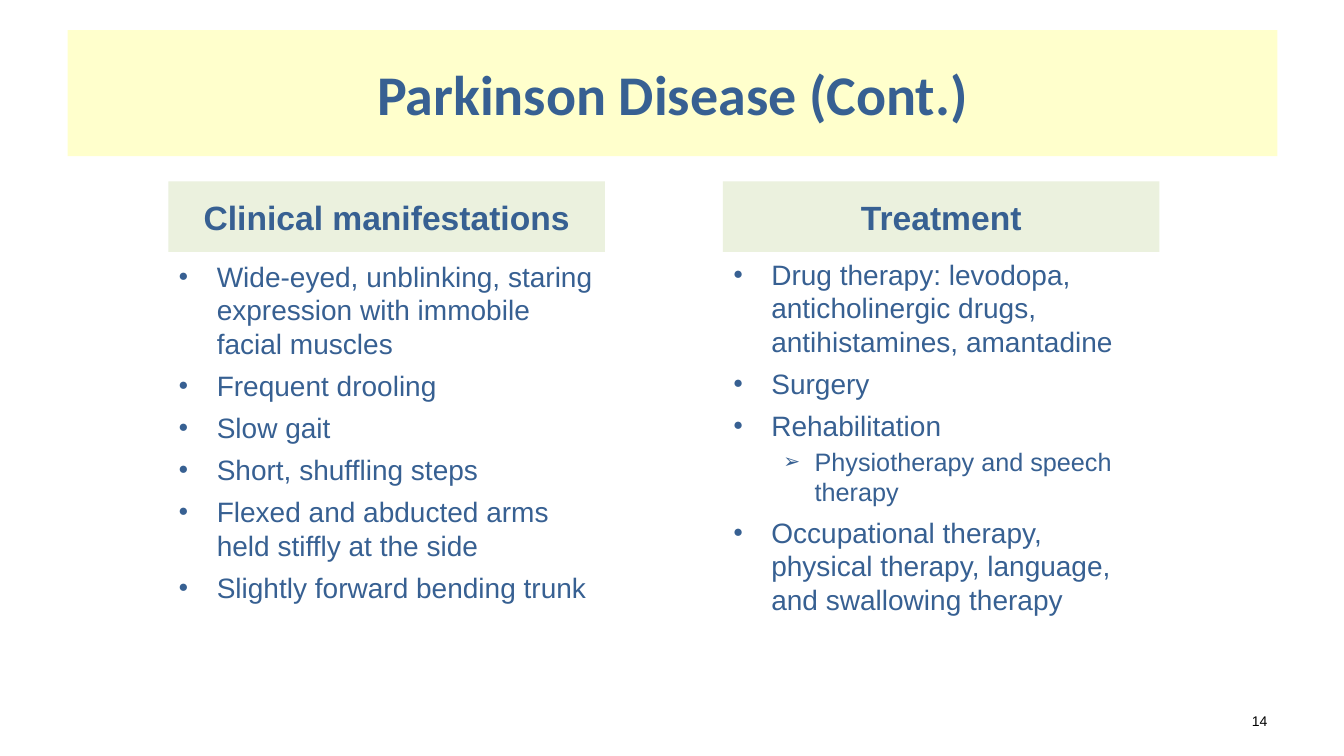
from dataclasses import dataclass

from lxml.etree import SubElement
from pptx import Presentation
from pptx.dml.color import RGBColor
from pptx.enum.text import MSO_ANCHOR, MSO_AUTO_SIZE, PP_ALIGN
from pptx.oxml.ns import qn
from pptx.util import Inches, Pt


@dataclass(frozen=True)
class Theme:
    blue: str = "376092"
    black: str = "000000"
    title_fill: str = "FFFFCC"
    heading_fill: str = "EBF1DE"
    title_font: str = "Calibri"
    body_font: str = "Arial"
    title_size: int = 40
    heading_size: int = 24
    number_size: int = 10


@dataclass(frozen=True)
class ListLevel:
    size: int
    space_before: int
    margin: float
    hanging: float
    bullet: str
    bullet_percent: int


LEVELS = (
    ListLevel(20, 6, 0.38, 0.38, "●", 60),
    ListLevel(18, 3, 0.81, 0.31, "➢", 80),
)


class SlideBuilder:
    def __init__(self, page, theme):
        self.page = page
        self.theme = theme

    def place(self, box, left, top, width, height):
        box.left, box.top = Inches(left), Inches(top)
        box.width, box.height = Inches(width), Inches(height)
        box.text_frame.word_wrap = True
        box.text_frame.auto_size = MSO_AUTO_SIZE.NONE

    def style(self, paragraph, size, color, font=None, bold=False):
        for span in paragraph.runs:
            span.font.name = font or self.theme.body_font
            span.font.size = Pt(size)
            span.font.bold = bold
            span.font.color.rgb = RGBColor.from_string(color)

    def banner(self, index, text, area, fill, size, font=None):
        """Fill a placeholder with a colour and one bold centred line."""
        box = self.page.placeholders[index]
        self.place(box, *area)
        box.fill.solid()
        box.fill.fore_color.rgb = RGBColor.from_string(fill)
        box.text_frame.text = text
        box.text_frame.vertical_anchor = MSO_ANCHOR.MIDDLE
        paragraph = box.text_frame.paragraphs[0]
        paragraph.alignment = PP_ALIGN.CENTER
        paragraph.space_before = Pt(0)
        self.style(paragraph, size, self.theme.blue, font, bold=True)

    def bullet(self, paragraph, level):
        properties = paragraph._p.get_or_add_pPr()
        properties.set("marL", str(Inches(level.margin)))
        properties.set("indent", str(-Inches(level.hanging)))
        SubElement(properties, qn("a:buSzPct"), val=str(level.bullet_percent * 1000))
        SubElement(properties, qn("a:buFont"), typeface=self.theme.body_font)
        SubElement(properties, qn("a:buChar"), char=level.bullet)

    def bullet_list(self, index, items, area):
        box = self.page.placeholders[index]
        self.place(box, *area)
        frame = box.text_frame
        frame.vertical_anchor = MSO_ANCHOR.TOP
        for position, (depth, text) in enumerate(items):
            paragraph = frame.add_paragraph() if position else frame.paragraphs[0]
            level = LEVELS[depth]
            paragraph.text = text
            paragraph.level = depth
            self.bullet(paragraph, level)
            paragraph.space_before = Pt(level.space_before if position else 0)
            self.style(paragraph, level.size, self.theme.blue)

    def slide_number(self, text, area):
        box = self.page.shapes.add_textbox(0, 0, 0, 0)
        self.place(box, *area)
        box.text_frame.text = text
        box.text_frame.vertical_anchor = MSO_ANCHOR.MIDDLE
        paragraph = box.text_frame.paragraphs[0]
        paragraph.alignment = PP_ALIGN.RIGHT
        self.style(paragraph, self.theme.number_size, self.theme.black)


COLUMN_WIDTH = 4.33
# heading, left edge, list top, list height, items as (level, text)
COLUMNS = (
    ("Clinical manifestations", 1.67, 2.52, 4.42, (
        (0, "Wide-eyed, unblinking, staring expression with immobile facial muscles"),
        (0, "Frequent drooling"),
        (0, "Slow gait"),
        (0, "Short, shuffling steps"),
        (0, "Flexed and abducted arms held stiffly at the side"),
        (0, "Slightly forward bending trunk"),
    )),
    ("Treatment", 7.17, 2.5, 4.32, (
        (0, "Drug therapy: levodopa, anticholinergic drugs, antihistamines, amantadine"),
        (0, "Surgery"),
        (0, "Rehabilitation"),
        (1, "Physiotherapy and speech therapy"),
        (0, "Occupational therapy, physical therapy, language, and swallowing therapy"),
    )),
)


def main():
    theme = Theme()
    deck = Presentation()
    deck.slide_width, deck.slide_height = Inches(13.33), Inches(7.5)
    comparison_layout = deck.slide_layouts.get_by_name("Comparison")
    builder = SlideBuilder(deck.slides.add_slide(comparison_layout), theme)

    builder.banner(0, "Parkinson Disease (Cont.)", (0.67, 0.3, 12, 1.25),
                   theme.title_fill, theme.title_size, theme.title_font)
    for column, (heading, left, top, height, items) in enumerate(COLUMNS):
        heading_index = 1 + 2 * column
        builder.banner(heading_index, heading, (left, 1.8, COLUMN_WIDTH, 0.7),
                       theme.heading_fill, theme.heading_size)
        builder.bullet_list(heading_index + 1, items, (left, top, COLUMN_WIDTH, height))
    builder.slide_number("14", (9.56, 6.95, 3.11, 0.4))
    deck.save("out.pptx")


if __name__ == "__main__":
    main()
